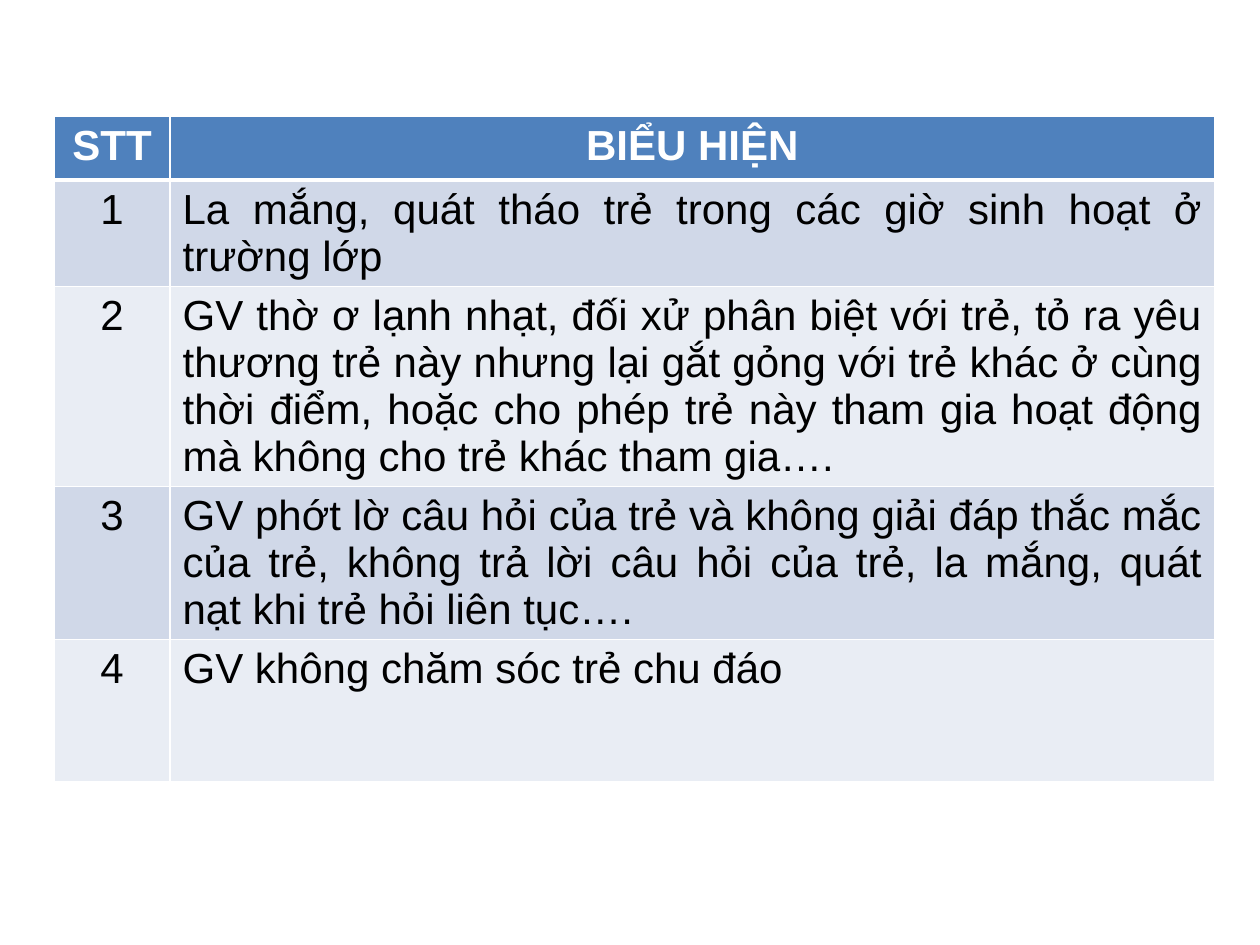
from lxml.etree import SubElement
from pptx import Presentation
from pptx.dml.color import RGBColor as RGB
from pptx.enum.text import PP_ALIGN as Align
from pptx.oxml.ns import qn
from pptx.util import Inches, Pt

THEME = {
    "font": "Arial", "size": 24, "line": "FFFFFF",
    "head": "4F81BD", "bands": ("D0D8E8", "E9EDF4"),
    "light": "FFFFFF", "dark": "000000",
}
COLS = (0.92, 8.29)
HEIGHTS = (0.51, 0.75, 1.41, 1.08, 1.13)
SIGNS = (
    "La mắng, quát tháo trẻ trong các giờ sinh hoạt ở trường lớp",
    "GV thờ ơ lạnh nhạt, đối xử phân biệt với trẻ, tỏ ra yêu thương trẻ này "
    "nhưng lại gắt gỏng với trẻ khác ở cùng thời điểm, hoặc cho phép trẻ này "
    "tham gia hoạt động mà không cho trẻ khác tham gia….",
    "GV phớt lờ câu hỏi của trẻ và không giải đáp thắc mắc của trẻ, không trả "
    "lời câu hỏi của trẻ, la mắng, quát nạt khi trẻ hỏi liên tục….",
    "GV không chăm sóc trẻ chu đáo",
)
ROWS = [("STT", "BIỂU HIỆN")] + [(str(n), sign) for n, sign in enumerate(SIGNS, 1)]


def edge(cell, side, width):
    """Draw one border of a cell, width in points."""
    line = SubElement(cell._tc.get_or_add_tcPr(), qn(f"a:ln{side}"), w=str(Pt(width)))
    fill = SubElement(line, qn("a:solidFill"))
    SubElement(fill, qn("a:srgbClr"), val=THEME["line"])


deck = Presentation()
deck.slide_width, deck.slide_height = Inches(10), Inches(7.5)
slide = deck.slides.add_slide(deck.slide_layouts[6])

frame = slide.shapes.add_table(
    len(ROWS), len(COLS), Inches(0.43), Inches(0.92),
    Inches(sum(COLS)), Inches(sum(HEIGHTS)))
table = frame.table
for col, width in zip(table.columns, COLS):
    col.width = Inches(width)
for row, height in zip(table.rows, HEIGHTS):
    row.height = Inches(height)

for r, texts in enumerate(ROWS):
    head = r == 0
    back = THEME["head"] if head else THEME["bands"][(r - 1) % 2]
    for c, text in enumerate(texts):
        cell = table.cell(r, c)
        edge(cell, "L", 1)
        edge(cell, "R", 1)
        edge(cell, "T", 3 if r == 1 else 1)
        edge(cell, "B", 3 if head else 1)
        cell.fill.solid()
        cell.fill.fore_color.rgb = RGB.from_string(back)
        para = cell.text_frame.paragraphs[0]
        para.alignment = Align.CENTER if head or c == 0 else Align.JUSTIFY
        run = para.add_run()
        run.text = text
        font = run.font
        font.name, font.size, font.bold = THEME["font"], Pt(THEME["size"]), head
        font.color.rgb = RGB.from_string(THEME["light" if head else "dark"])

deck.save("out.pptx")
